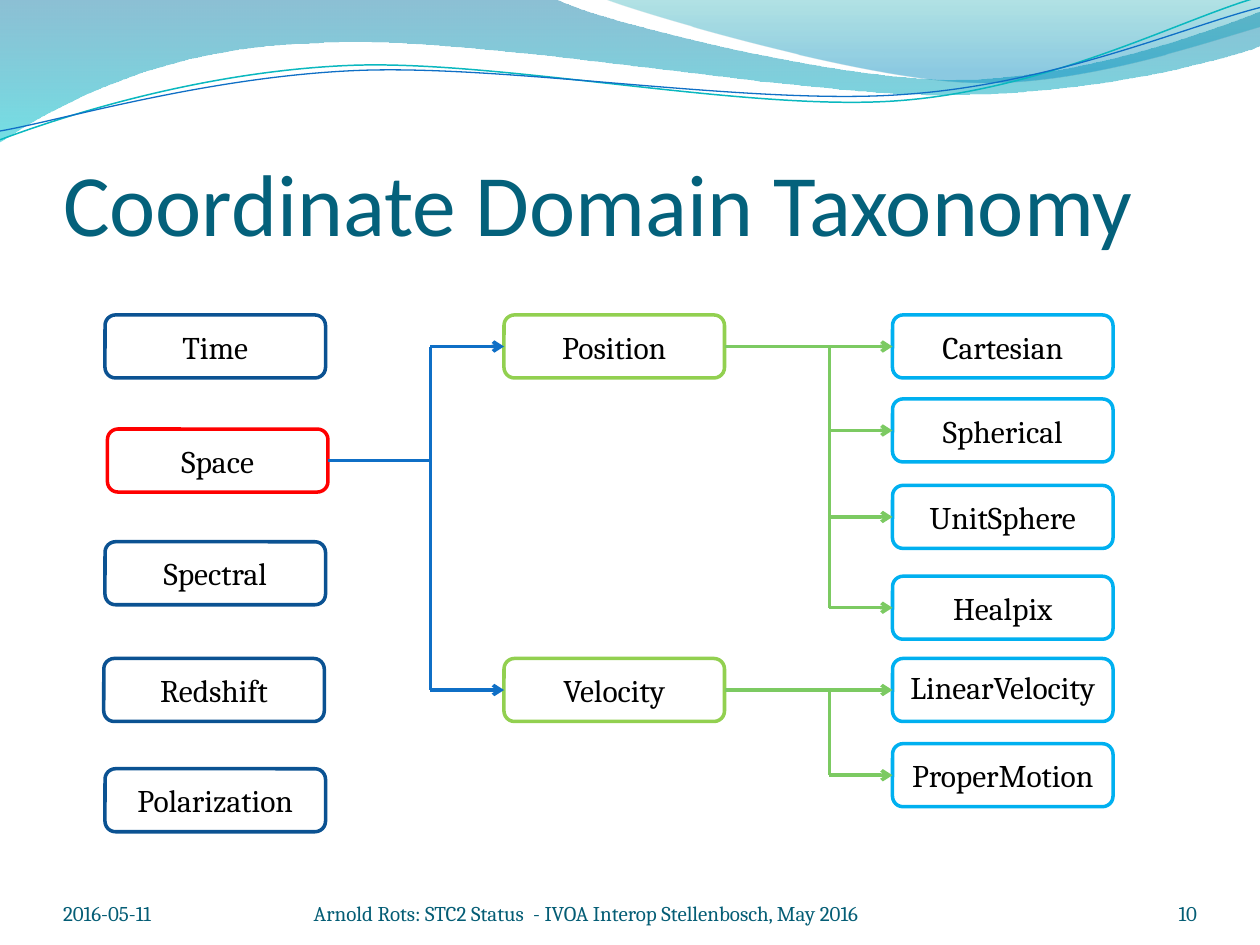
from lxml.etree import SubElement
from pptx import Presentation
from pptx.dml.color import RGBColor
from pptx.enum.shapes import MSO_CONNECTOR as Connector, MSO_SHAPE as Shape
from pptx.enum.text import MSO_ANCHOR as Anchor, MSO_AUTO_SIZE as AutoSize, PP_ALIGN as Align
from pptx.oxml.ns import qn
from pptx.util import Pt

NAVY = RGBColor(0x0B, 0x52, 0x92)
RED = RGBColor(0xFF, 0x00, 0x00)
LIME = RGBColor(0x92, 0xD0, 0x50)
SKY = RGBColor(0x00, 0xB0, 0xF0)
BLUE = RGBColor(0x0F, 0x6F, 0xC6)
GREEN = RGBColor(0x7C, 0xCA, 0x62)
TEAL = RGBColor(0x0A, 0xB8, 0xBF)
BLACK = RGBColor(0x00, 0x00, 0x00)
TITLE_COLOR = RGBColor(0x04, 0x61, 0x7B)
FOOTER_COLOR = RGBColor(0x04, 0x5D, 0x75)

TITLE = "Coordinate Domain Taxonomy"
NODES = [
    ("Time", 60, 180, NAVY),
    ("Space", 61.4, 245.2, RED),
    ("Spectral", 60, 309.6, NAVY),
    ("Redshift", 59.3, 376.3, NAVY),
    ("Polarization", 60, 439.3, NAVY),
    ("Position", 288, 180, LIME),
    ("Velocity", 288, 376.3, LIME),
    ("Cartesian", 510, 180, SKY),
    ("Spherical", 510, 228, SKY),
    ("UnitSphere", 510, 277.4, SKY),
    ("Healpix", 510, 329.3, SKY),
    ("LinearVelocity", 510, 376.3, SKY),
    ("ProperMotion", 510, 425, SKY),
]
NODE_WIDTH, NODE_HEIGHT = 126, 36
RAISED_LABELS = {"LinearVelocity": 4}
BRANCHES = [
    ("Space", 246, BLUE, ["Position", "Velocity"]),
    ("Position", 474, GREEN, ["Cartesian", "Spherical", "UnitSphere", "Healpix"]),
    ("Velocity", 474, GREEN, ["LinearVelocity", "ProperMotion"]),
]
FOOTERS = [
    ("2016-05-11", 36, 132, Align.LEFT),
    ("Arnold Rots: STC2 Status  - IVOA Interop Stellenbosch, May 2016", 179.3, 349, Align.LEFT),
    ("10", 624, 60, Align.RIGHT),
]

WAVE_FILLS = [
    ([(0, 0), (4.4, -0.01),
      (4.76, 0.17, 6.64, 0.63, 7.58, 0.63), (8.53, 0.63, 9.58, 0.26, 10, 0.09),
      (10.01, 0.36),
      (9.83, 0.44, 8.7, 0.76, 7.46, 0.75), (6.22, 0.75, 3.82, 0.28, 2.57, 0.34),
      (1.29, 0.36, 0.46, 0.83, -0.01, 1.13), (0, 0)],
     [(0, RGBColor(0x00, 0x74, 0xA1), 45), (1, RGBColor(0x00, 0xC6, 0xCF), 55)]),
    ([(4.79, -0.01),
      (5.09, 0.11, 6.82, 0.62, 7.69, 0.65), (8.56, 0.69, 9.61, 0.32, 10, 0.21),
      (10, 0), (4.79, -0.01)],
     [(0, RGBColor(0x00, 0xA1, 0xA9), 30), (0.8, RGBColor(0x00, 0x8B, 0xBF), 45)]),
]
WAVE_LINES = [
    ([(0, 1.11), (0.48, 0.93, 1.58, 0.57, 2.77, 0.52),
      (3.95, 0.47, 5.93, 0.89, 7.13, 0.8), (8.33, 0.71, 9.38, 0.15, 9.98, -0.02)],
     TEAL, 0.85),
    ([(0, 1.04), (0.47, 0.96, 1.64, 0.61, 2.83, 0.56),
      (4.03, 0.51, 5.97, 0.84, 7.17, 0.75), (8.36, 0.67, 9.41, 0.21, 10, 0.06)],
     BLUE, 0.75),
]


def add_wave(slide, segments, close):
    points = [(Pt(72 * x), Pt(72 * y))
              for segment in segments for x, y in zip(segment[::2], segment[1::2])]
    builder = slide.shapes.build_freeform(*points[0])
    builder.add_line_segments(points[1:], close=close)
    wave = builder.convert_to_shape()
    wave.shadow.inherit = False
    bend_curves(wave, segments)
    slide.shapes.title.element.addprevious(wave.element)
    return wave


def bend_curves(wave, segments):
    straight_lines = iter(list(wave.element.iter(qn("a:lnTo"))))
    for segment in segments[1:]:
        lines = [next(straight_lines) for _ in range(len(segment) // 2)]
        if len(lines) == 3:
            curve = SubElement(lines[0].getparent(), qn("a:cubicBezTo"))
            lines[0].addprevious(curve)
            for line in lines:
                curve.append(line[0])
                line.getparent().remove(line)


def fill_gradient(shape, stops):
    shape.fill.gradient()
    shape.fill.gradient_angle = 270
    for stop, (position, color, _) in zip(shape.fill.gradient_stops, stops):
        stop.position = position
        stop.color.rgb = color
    for element, (_, _, opacity) in zip(shape.element.iter(qn("a:gs")), stops):
        SubElement(element[0], qn("a:alpha"), val=str(opacity * 1000))


def write(frame, text, font_name, size, color, align, anchor, top=0, bottom=0):
    frame.auto_size = AutoSize.NONE
    frame.word_wrap = True
    frame.vertical_anchor = anchor
    frame.margin_left = frame.margin_right = 0
    frame.margin_top, frame.margin_bottom = Pt(top), Pt(bottom)
    paragraph = frame.paragraphs[0]
    paragraph.alignment = align
    run = paragraph.add_run()
    run.text = text
    run.font.name, run.font.size = font_name, Pt(size)
    run.font.color.rgb = color


def add_node(slide, label, left, top, color):
    node = slide.shapes.add_shape(Shape.ROUNDED_RECTANGLE, Pt(left), Pt(top),
                                  Pt(NODE_WIDTH), Pt(NODE_HEIGHT))
    node.shadow.inherit = False
    node.fill.background()
    node.line.color.rgb = color
    node.line.width = Pt(2)
    write(node.text_frame, label, "Cambria", 18, BLACK, Align.CENTER, Anchor.MIDDLE,
          bottom=RAISED_LABELS.get(label, 0))
    return node


def add_link(slide, start, end, color, arrow=False):
    link = slide.shapes.add_connector(Connector.STRAIGHT, *start, *end)
    link.line.color.rgb = color
    link.line.width = Pt(2)
    if arrow:
        SubElement(link.line._get_or_add_ln(), qn("a:tailEnd"), type="arrow")
    SubElement(link.element.spPr, qn("a:effectLst"))
    return link


def add_branch(slide, parent, children, trunk, color):
    def middle(node):
        return node.top + node.height // 2

    first, *others = children
    start = (parent.left + parent.width, middle(parent))
    straight = middle(first) == middle(parent)
    end = (first.left, middle(first)) if straight else (trunk, middle(parent))
    link = add_link(slide, start, end, color, arrow=straight)
    link.begin_connect(parent, 3)
    if straight:
        link.end_connect(first, 1)
    add_link(slide, (trunk, middle(first)), (trunk, middle(children[-1])), color)
    for child in others if straight else children:
        link = add_link(slide, (trunk, middle(child)), (child.left, middle(child)), color, arrow=True)
        link.end_connect(child, 1)


def main():
    presentation = Presentation()
    presentation.slide_width, presentation.slide_height = Pt(720), Pt(540)
    slide = presentation.slides.add_slide(presentation.slide_layouts[5])

    title = slide.shapes.title
    title.left, title.top, title.width, title.height = Pt(36), Pt(55.4), Pt(654), Pt(90)
    write(title.text_frame, TITLE, "Calibri", 50, TITLE_COLOR, Align.LEFT, Anchor.BOTTOM, top=3.6)

    for segments, stops in WAVE_FILLS:
        wave = add_wave(slide, segments, close=True)
        fill_gradient(wave, stops)
        wave.line.fill.background()
    for segments, color, width in WAVE_LINES:
        wave = add_wave(slide, segments, close=False)
        wave.fill.background()
        wave.line.color.rgb = color
        wave.line.width = Pt(width)

    nodes = {node[0]: add_node(slide, *node) for node in NODES}
    for parent, trunk, color, children in BRANCHES:
        add_branch(slide, nodes[parent], [nodes[child] for child in children], Pt(trunk), color)

    for text, left, width, align in FOOTERS:
        box = slide.shapes.add_textbox(Pt(left), Pt(500.4), Pt(width), Pt(28.8))
        write(box.text_frame, text, "Cambria", 12, FOOTER_COLOR, align, Anchor.BOTTOM)
    presentation.save("out.pptx")


if __name__ == "__main__":
    main()
